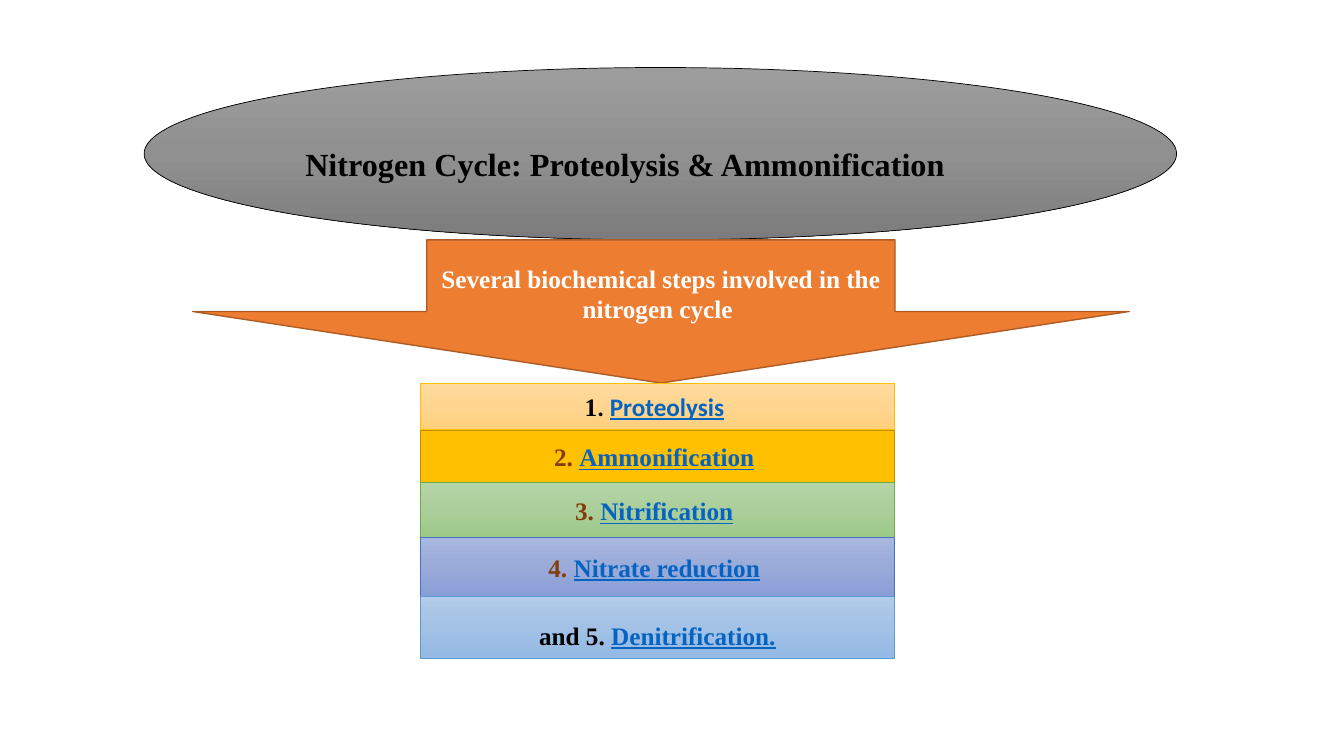
import copy
import pptx
import pptx.dml.color
import pptx.enum.shapes
import pptx.enum.text
import pptx.util

Inches = pptx.util.Inches
SHAPES = pptx.enum.shapes.MSO_SHAPE
ALIGN = pptx.enum.text.PP_ALIGN
SERIF = "Times New Roman"
BLACK, WHITE, BROWN, LINK = "000000", "FFFFFF", "843C0B", "0563C1"


def color(value):
    return pptx.dml.color.RGBColor.from_string(value)


def add_block(preset, box, fills, line, line_width, runs, size, align, hanging=False):
    shape = slide.shapes.add_shape(preset, *[Inches(length) for length in box])
    shape.shadow.inherit = False
    shape.line.color.rgb = color(line)
    shape.line.width = pptx.util.Pt(line_width)
    if len(fills) == 1:
        shape.fill.solid()
        shape.fill.fore_color.rgb = color(fills[0])
    else:
        shape.fill.gradient()
        shape.fill.gradient_angle = 270
        stop_list = shape._element.spPr.find(".//" + pptx.oxml.ns.qn("a:gsLst"))
        stop_list.insert(1, copy.deepcopy(stop_list[0]))
        for stop, position, fill in zip(shape.fill.gradient_stops, (0, 0.5, 1), fills):
            stop.position = position
            stop.color.rgb = color(fill)
    shape.text_frame.word_wrap = True
    shape.text_frame.vertical_anchor = pptx.enum.text.MSO_ANCHOR.MIDDLE
    paragraph = shape.text_frame.paragraphs[0]
    paragraph.alignment = align
    if hanging:
        paragraph.line_spacing = 1.5
        properties = paragraph._p.get_or_add_pPr()
        properties.set("marL", str(Inches(0.5)))
        properties.set("indent", str(Inches(-0.5)))
    for text, font_name, text_color in runs:
        run = paragraph.add_run()
        run.text = text
        font_format = {
            "name": font_name,
            "size": pptx.util.Pt(size),
            "bold": True,
            "underline": text_color == LINK,
        }
        for name, value in font_format.items():
            setattr(run.font, name, value)
        run.font.color.rgb = color(text_color)


presentation = pptx.Presentation()
presentation.slide_width = Inches(13.33)
presentation.slide_height = Inches(7.5)
slide = presentation.slides.add_slide(presentation.slide_layouts[6])

add_block(
    SHAPES.OVAL, (1.43, 0.67, 10.24, 1.71), ("9D9D9D", "909090", "7C7C7C"), BLACK, 0.5,
    [("Nitrogen Cycle: Proteolysis & Ammonification", SERIF, BLACK)],
    23, ALIGN.LEFT, hanging=True,
)
add_block(
    SHAPES.DOWN_ARROW, (1.91, 2.38, 9.29, 1.42), ("ED7D31",), "AF5C24", 1,
    [("Several biochemical steps involved in the nitrogen cycle ", SERIF, WHITE)],
    18, ALIGN.CENTER,
)

steps = [
    (3.8, 0.46, ("FFDB9E", "FFD590", "FFD07C"), "FFC000", 0.5,
     [("1", SERIF, BLACK), (". ", "Calibri", BLACK),
      ("Proteolysis", "Calibri", LINK), (" ", "Calibri", WHITE)]),
    (4.27, 0.52, ("FFC000",), "BD8E00", 1,
     [("2. ", SERIF, BROWN), ("Ammonification", SERIF, LINK), (" ", SERIF, BROWN)]),
    (4.79, 0.55, ("B5D5A7", "AACE9A", "9CC987"), "70AD47", 0.5,
     [("3. ", SERIF, BROWN), ("Nitrification", SERIF, LINK), (" ", SERIF, BROWN)]),
    (5.33, 0.59, ("A8B7DF", "9AABD9", "889ED7"), "4472C4", 0.5,
     [("4. ", SERIF, BROWN), ("Nitrate reduction", SERIF, LINK), (" ", SERIF, BROWN)]),
    (5.92, 0.61, ("B1CBE9", "A3C1E5", "93B9E4"), "5B9BD5", 0.5,
     [("and 5. ", SERIF, BLACK), ("Denitrification.", SERIF, LINK)]),
]
for top, height, fills, line, line_width, runs in steps:
    add_block(
        SHAPES.RECTANGLE, (4.17, top, 4.7, height), fills, line, line_width,
        runs, 18, ALIGN.CENTER, hanging=runs is steps[-1][-1],
    )

presentation.save("out.pptx")
